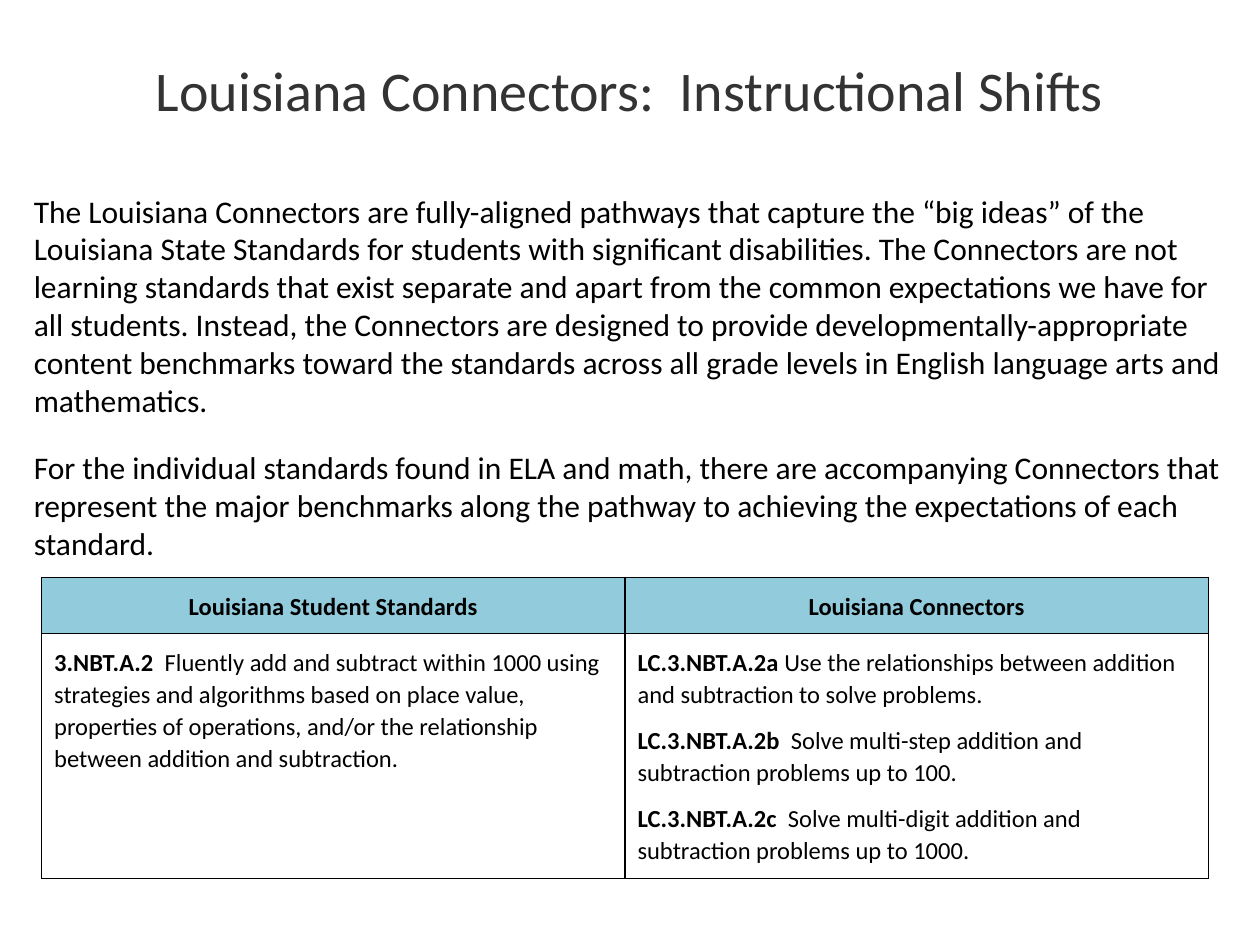
from lxml import etree
from pptx import Presentation
from pptx.dml.color import RGBColor
from pptx.enum.text import MSO_ANCHOR, PP_ALIGN
from pptx.oxml.ns import qn
from pptx.util import Inches, Pt

LEFT, MID = PP_ALIGN.LEFT, PP_ALIGN.CENTER
TOP, CENTER = MSO_ANCHOR.TOP, MSO_ANCHOR.MIDDLE
WIDE, HIGH = 10, 7.5
PAD = Inches(0.1)

TITLE = "Louisiana Connectors:  Instructional Shifts"
BODY = [
    "The Louisiana Connectors are fully-aligned pathways that capture the “big ideas” of the "
    "Louisiana State Standards for students with significant disabilities. The Connectors are "
    "not learning standards that exist separate and apart from the common expectations we have "
    "for all students. Instead, the Connectors are designed to provide "
    "developmentally-appropriate content benchmarks toward the standards across all grade "
    "levels in English language arts and mathematics.",
    "For the individual standards found in ELA and math, there are accompanying Connectors that "
    "represent the major benchmarks along the pathway to achieving the expectations of each "
    "standard.",
]
HEADS = ["Louisiana Student Standards", "Louisiana Connectors"]
GOALS = [
    [("3.NBT.A.2  ", "Fluently add and subtract within 1000 using strategies and algorithms "
      "based on place value, properties of operations, and/or the relationship between "
      "addition and subtraction.")],
    [("LC.3.NBT.A.2a ", "Use the relationships between addition and subtraction to solve "
      "problems."),
     ("LC.3.NBT.A.2b  ", "Solve multi-step addition and subtraction problems up to 100."),
     ("LC.3.NBT.A.2c  ", "Solve multi-digit addition and subtraction problems up to 1000.")],
]


def color(code):
    return RGBColor.from_string(code)


def write(frame, paras, size=14, ink="000000", align=LEFT, gap=0, line=None):
    frame.word_wrap = True
    for i, runs in enumerate(paras):
        para = frame.add_paragraph() if i else frame.paragraphs[0]
        para.alignment = align
        para.line_spacing = line
        if i < len(paras) - 1:
            para.space_after = Pt(gap)
        for text, bold in runs:
            run = para.add_run()
            run.text = text
            font = run.font
            font.name, font.size, font.bold = "Calibri", Pt(size), bold
            font.color.rgb = color(ink)


def inset(part):
    part.margin_left = part.margin_right = PAD
    part.margin_top = part.margin_bottom = PAD


def block(slide, box, paras, anchor=TOP, **form):
    frame = slide.shapes.add_textbox(*map(Inches, box)).text_frame
    inset(frame)
    frame.vertical_anchor = anchor
    write(frame, [[(text, False)] for text in paras], **form)


def border(cell):
    props = cell._tc.get_or_add_tcPr()
    for i, side in enumerate(("a:lnL", "a:lnR", "a:lnT", "a:lnB")):
        edge = etree.Element(qn(side), w=str(Pt(0.75)))
        fill = etree.SubElement(edge, qn("a:solidFill"))
        etree.SubElement(fill, qn("a:srgbClr"), val="000000")
        props.insert(i, edge)


def grid(slide, box, rows):
    left, top, width, high = box
    table = slide.shapes.add_table(2, len(HEADS), *map(Inches, box)).table
    for col in table.columns:
        col.width = Inches(width / len(HEADS))
    for row, size in zip(table.rows, rows):
        row.height = Inches(size)
    heads = [[[(text, True)]] for text in HEADS]
    goals = [[[(code, True), (text, False)] for code, text in goal] for goal in GOALS]
    for r, line in enumerate((heads, goals)):
        for c, paras in enumerate(line):
            cell = table.cell(r, c)
            inset(cell)
            if r:
                cell.fill.background()
            else:
                cell.fill.solid()
                cell.fill.fore_color.rgb = color("92CCDC")
            border(cell)
            write(cell.text_frame, paras, align=LEFT if r else MID, gap=8, line=1.07)


def main():
    deck = Presentation()
    deck.slide_width, deck.slide_height = Inches(WIDE), Inches(HIGH)
    slide = deck.slides.add_slide(deck.slide_layouts[6])
    head, side = 1.42, 0.17
    block(slide, (0, 0, WIDE, head), [TITLE], anchor=CENTER, size=32, ink="333333", align=MID)
    block(slide, (side, head, WIDE - 2 * side, 5.58), BODY, size=18, gap=17)
    rows = 0.45, 1.94
    grid(slide, (0.33, 4.58, 9.26, sum(rows)), rows)
    deck.save("out.pptx")


if __name__ == "__main__":
    main()
